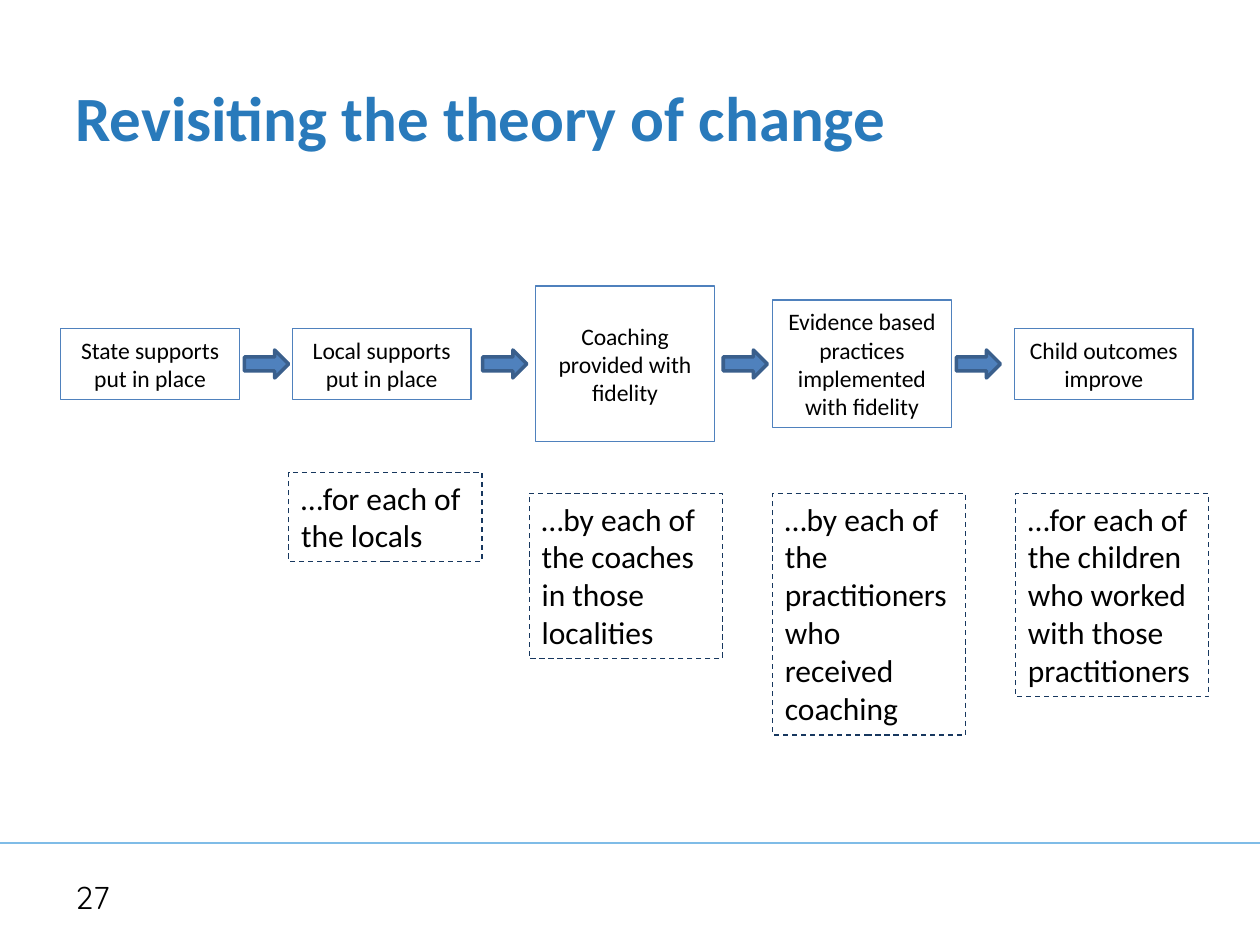
from lxml import etree
from pptx import Presentation
from pptx.dml.color import RGBColor
from pptx.enum.dml import MSO_LINE
from pptx.enum.shapes import MSO_CONNECTOR, MSO_SHAPE
from pptx.enum.text import MSO_ANCHOR, PP_ALIGN
from pptx.oxml.ns import qn
from pptx.util import Pt

# Content
TITLE = "Revisiting the theory of change"
PAGE = "27"
STEPS = [  # text, left, height
    ("State supports put in place", 34.6, 40.3),
    ("Local supports put in place", 167, 40.3),
    ("Coaching provided with fidelity", 306, 89),
    ("Evidence based practices implemented with fidelity", 441.4, 73),
    ("Child outcomes improve", 579.6, 40.3),
]
ARROW_LEFTS = [139.7, 275.8, 413.3, 546.5]
NOTES = [  # text, left, top, number of lines
    ("…for each of the locals", 165, 270, 2),
    ("…by each of the coaches in those localities", 302.4, 282, 4),
    ("…by each of the practitioners who received coaching", 441.4, 282, 6),
    ("…for each of the children who worked with those practitioners", 580.3, 282, 5),
]


class Theme:
    title = RGBColor.from_string("297ABB")
    text = RGBColor.from_string("000000")
    blue = RGBColor.from_string("4F81BD")
    arrow_edge = RGBColor.from_string("3A5F8C")
    note_edge = RGBColor.from_string("17375E")
    rule = RGBColor.from_string("7FBCE7")
    font, page_font = "Calibri", "Quicksand"
    title_size, body_size, step_size = 36, 18, 13.5


# Layout, in points
W, H = 720, 540
FLOW_Y = 208
STEP_W, NOTE_W = 102.2, 110.4
ARROW_W, ARROW_H = 25.2, 16
NOTE_LINE, NOTE_PAD = 21.8, 7.2
RULE_Y = 481.8

prs = Presentation()
prs.slide_width, prs.slide_height = Pt(W), Pt(H)
s = prs.slides.add_slide(prs.slide_layouts[6])


def set_text(sp, text, size, color=Theme.text, font=Theme.font, bold=False,
             align=PP_ALIGN.LEFT, anchor=MSO_ANCHOR.MIDDLE):
    tf = sp.text_frame
    tf.word_wrap = True
    tf.vertical_anchor = anchor
    tf.text = text
    p = tf.paragraphs[0]
    p.alignment = align
    r = p.runs[0]
    r.font.size, r.font.name, r.font.bold = Pt(size), font, bold
    r.font.color.rgb = color


def add_box(kind, x, y, w, h, edge, width, fill=None):
    sp = s.shapes.add_shape(kind, Pt(x), Pt(y), Pt(w), Pt(h))
    sp.shadow.inherit = False
    if fill is None:
        sp.fill.background()
    else:
        sp.fill.solid()
        sp.fill.fore_color.rgb = fill
    sp.line.color.rgb = edge
    sp.line.width = Pt(width)
    return sp


# Footer rule and page number
rule = s.shapes.add_connector(MSO_CONNECTOR.STRAIGHT, 0, Pt(RULE_Y), Pt(W), Pt(RULE_Y))
rule.line.color.rgb = Theme.rule
rule.line.width = Pt(1.5)
etree.SubElement(rule._element.spPr, qn("a:effectLst"))
page = s.shapes.add_textbox(Pt(36), Pt(498.2), Pt(168), Pt(28.8))
set_text(page, PAGE, Theme.body_size, font=Theme.page_font)

# Title
title = s.shapes.add_textbox(Pt(36), Pt(21.6), Pt(648), Pt(90))
set_text(title, TITLE, Theme.title_size, Theme.title, bold=True)

# Steps, centred on the flow line
for text, x, h in STEPS:
    sp = add_box(MSO_SHAPE.RECTANGLE, x, FLOW_Y - h / 2, STEP_W, h, Theme.blue, 0.75)
    set_text(sp, text, Theme.step_size, align=PP_ALIGN.CENTER)

# Arrows between the steps
for x in ARROW_LEFTS:
    add_box(MSO_SHAPE.RIGHT_ARROW, x, FLOW_Y - ARROW_H / 2, ARROW_W, ARROW_H,
            Theme.arrow_edge, 2, Theme.blue)

# Dashed notes, as tall as their text
for text, x, y, lines in NOTES:
    sp = add_box(MSO_SHAPE.RECTANGLE, x, y, NOTE_W, lines * NOTE_LINE + NOTE_PAD,
                 Theme.note_edge, 0.75)
    sp.line.dash_style = MSO_LINE.DASH
    set_text(sp, text, Theme.body_size, anchor=MSO_ANCHOR.TOP)

prs.save("out.pptx")
